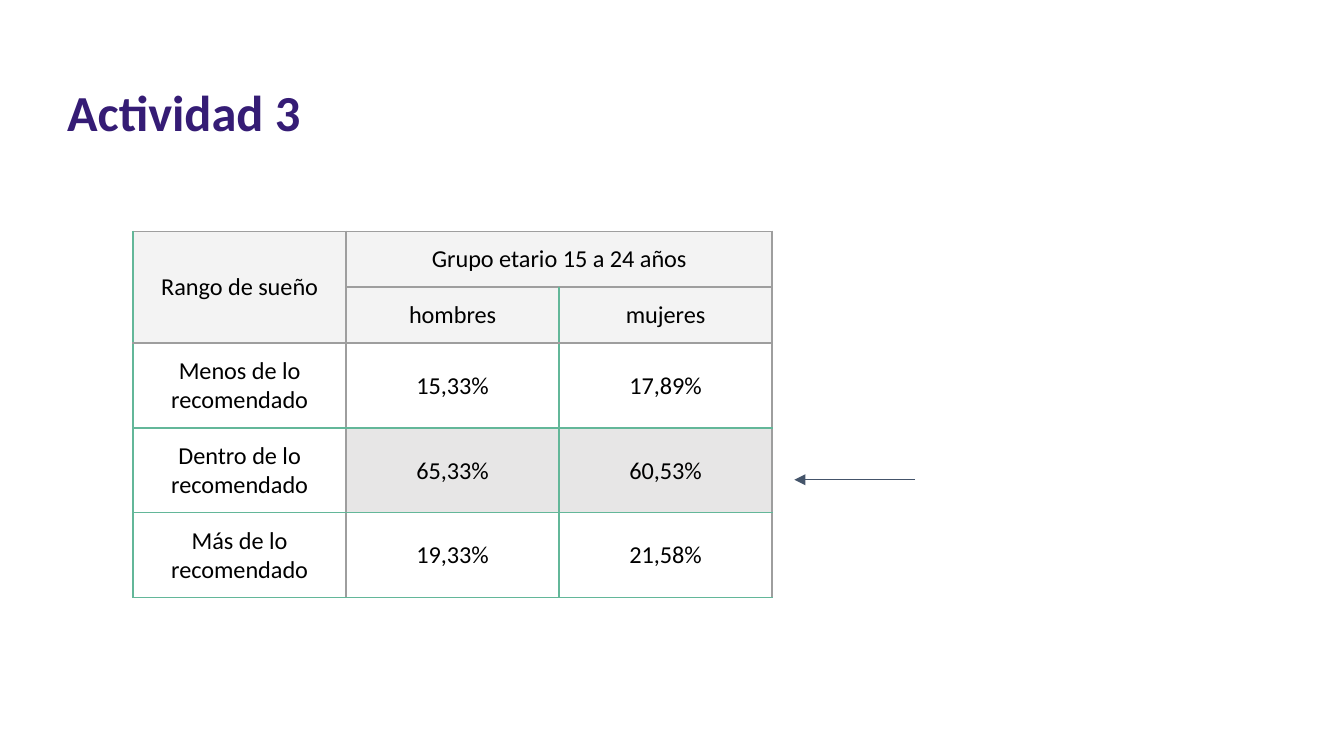
from dataclasses import dataclass

from lxml.etree import SubElement
from pptx import Presentation
from pptx.dml.color import RGBColor
from pptx.enum.shapes import MSO_CONNECTOR
from pptx.enum.text import MSO_ANCHOR, PP_ALIGN
from pptx.oxml.ns import qn
from pptx.util import Inches, Pt


@dataclass(frozen=True)
class Theme:
    font: str = "Calibri"
    title_size: float = 27
    table_size: float = 13
    table_spacing: float = 0.98
    title: str = "351C75"
    text: str = "000000"
    header_fill: str = "F3F3F3"
    highlight_fill: str = "E7E6E6"
    grid_green: str = "63B799"
    grid_gray: str = "9E9E9E"
    arrow: str = "44546A"
    line_width: float = 0.75


THEME = Theme()

SLEEP_ROWS = [
    ["Rango de sueño", "Grupo etario 15 a 24 años", ""],
    ["", "hombres", "mujeres"],
    ["Menos de lo recomendado", "15,33%", "17,89%"],
    ["Dentro de lo recomendado", "65,33%", "60,53%"],
    ["Más de lo recomendado", "19,33%", "21,58%"],
]
HEADER_ROWS = 2
HIGHLIGHT_ROW = 3
COLUMN_WIDTH = 1.585
ROW_HEIGHT = 0.4


def style_font(font, size, color, bold=False):
    font.name = THEME.font
    font.size = Pt(size)
    font.bold = bold
    font.color.rgb = RGBColor.from_string(color)


def add_title(slide, text):
    title = slide.shapes.title
    title.left, title.top = Inches(0.43), Inches(0.52)
    title.width, title.height = Inches(8.98), Inches(0.61)
    frame = title.text_frame
    frame.margin_left = frame.margin_right = Inches(0.07)
    frame.margin_top = frame.margin_bottom = Inches(0.07)
    frame.vertical_anchor = MSO_ANCHOR.MIDDLE
    frame.text = text
    para = frame.paragraphs[0]
    para.alignment = PP_ALIGN.LEFT
    style_font(para.runs[0].font, THEME.title_size, THEME.title, bold=True)


def add_border(cell, side, color):
    properties = cell._tc.get_or_add_tcPr()
    line = SubElement(properties, qn(f"a:{side}"), w=str(Pt(THEME.line_width)))
    fill = SubElement(line, qn("a:solidFill"))
    SubElement(fill, qn("a:srgbClr"), val=color)


def draw_cell_borders(cell, row, column):
    """Gray lines frame the header and the data block; the rest are green."""
    def vertical(index):
        return THEME.grid_gray if index in (1, 3) else THEME.grid_green

    def horizontal(index):
        return THEME.grid_gray if index <= HEADER_ROWS else THEME.grid_green

    width = cell.span_width if cell.is_merge_origin else 1
    height = cell.span_height if cell.is_merge_origin else 1
    add_border(cell, "lnL", vertical(column))
    add_border(cell, "lnR", vertical(column + width))
    add_border(cell, "lnT", horizontal(row))
    add_border(cell, "lnB", horizontal(row + height))


def fill_cell(cell, row, column):
    if row < HEADER_ROWS:
        color = THEME.header_fill
    elif row == HIGHLIGHT_ROW and column > 0:
        color = THEME.highlight_fill
    else:
        cell.fill.background()
        return
    cell.fill.solid()
    cell.fill.fore_color.rgb = RGBColor.from_string(color)


def write_cell(cell, text):
    cell.margin_left = cell.margin_right = Inches(0.1)
    cell.margin_top = cell.margin_bottom = Inches(0.1)
    cell.vertical_anchor = MSO_ANCHOR.MIDDLE
    if text:
        cell.text_frame.text = text
        para = cell.text_frame.paragraphs[0]
        para.alignment = PP_ALIGN.CENTER
        para.line_spacing = THEME.table_spacing
        style_font(para.runs[0].font, THEME.table_size, THEME.text)


def add_sleep_table(slide):
    row_count, column_count = len(SLEEP_ROWS), len(SLEEP_ROWS[0])
    table = slide.shapes.add_table(
        row_count, column_count, Inches(0.99), Inches(1.72),
        Inches(column_count * COLUMN_WIDTH),
        Inches(row_count * ROW_HEIGHT)).table
    table.first_row = table.horz_banding = False
    table.cell(0, 0).merge(table.cell(1, 0))
    table.cell(0, 1).merge(table.cell(0, 2))
    for row, texts in enumerate(SLEEP_ROWS):
        for column, text in enumerate(texts):
            cell = table.cell(row, column)
            write_cell(cell, text)
            draw_cell_borders(cell, row, column)
            fill_cell(cell, row, column)


def add_arrow(slide, start, end):
    arrow = slide.shapes.add_connector(
        MSO_CONNECTOR.STRAIGHT, *map(Inches, start), *map(Inches, end))
    arrow.line.color.rgb = RGBColor.from_string(THEME.arrow)
    arrow.line.width = Pt(THEME.line_width)
    SubElement(arrow.line._get_or_add_ln(), qn("a:tailEnd"), type="triangle")
    SubElement(arrow._element.spPr, qn("a:effectLst"))


def main():
    deck = Presentation()
    deck.slide_width = Inches(10)
    deck.slide_height = deck.slide_width * 9 // 16
    slide = deck.slides.add_slide(deck.slide_layouts[5])
    add_title(slide, "Actividad 3")
    add_sleep_table(slide)
    add_arrow(slide, (6.81, 3.57), (5.91, 3.57))
    deck.save("out.pptx")


if __name__ == "__main__":
    main()
